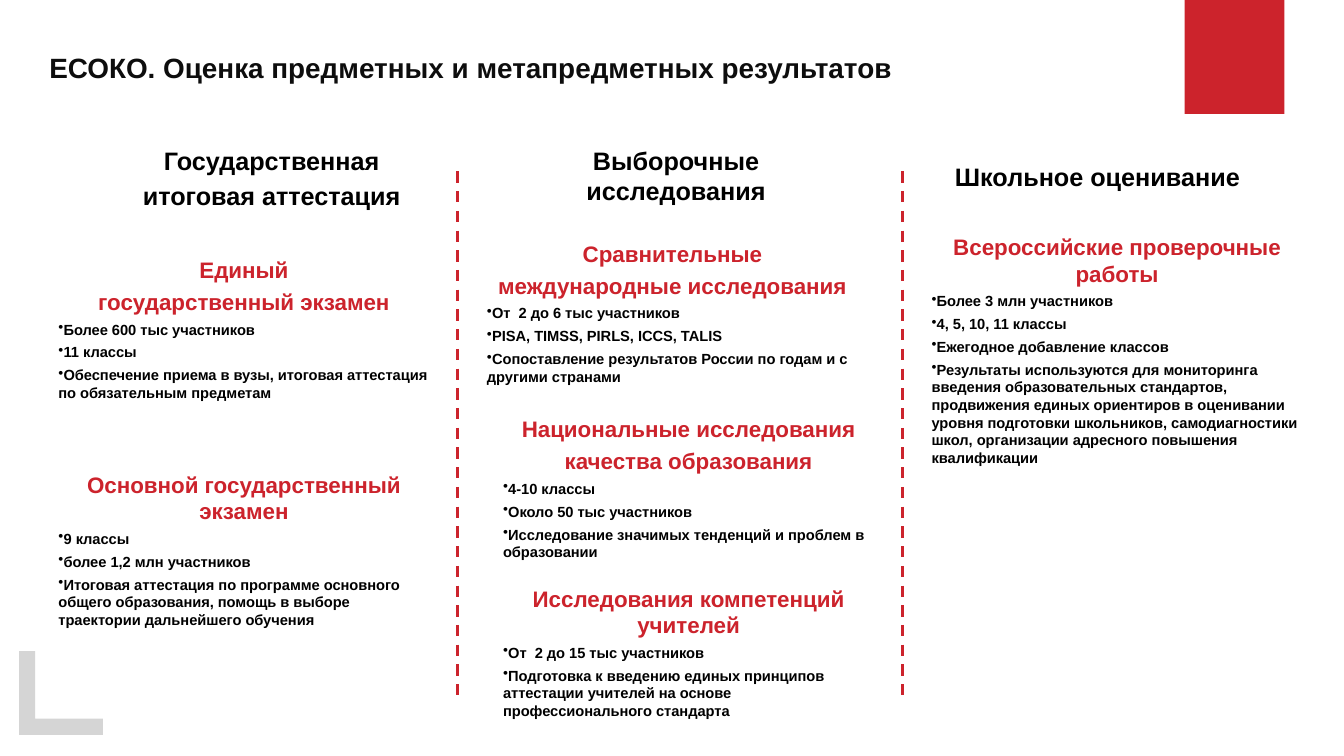
from dataclasses import dataclass

from lxml.etree import SubElement
from pptx import Presentation
from pptx.dml.color import RGBColor as Rgb
from pptx.enum.dml import MSO_LINE as Dash
from pptx.enum.shapes import MSO_CONNECTOR as Link, MSO_SHAPE as Shape
from pptx.enum.text import PP_ALIGN as Align
from pptx.oxml.ns import qn
from pptx.util import Inches, Pt


@dataclass(frozen=True)
class Theme:
    """Colours, font and type sizes of the slide."""
    red: Rgb = Rgb(0xCC, 0x23, 0x2C)
    gray: Rgb = Rgb(0xD5, 0xD5, 0xD5)
    ink: Rgb = Rgb(0x0D, 0x0D, 0x0D)
    black: Rgb = Rgb(0, 0, 0)
    font: str = "Arial"
    title: float = 19.9
    head: float = 18
    topic: float = 16
    body: float = 10.5
    gap: float = 3.8


THEME = Theme()
TITLE = "ЕСОКО. Оценка предметных и метапредметных результатов"
COLUMNS = [
    ((0.45, 1.31), 0.63, ["Государственная", "итоговая аттестация"], [
        (0, 1.1, 2.2, ["Единый", "государственный экзамен"], [
            "Более 600 тыс участников",
            "11 классы",
            "Обеспечение приема в вузы, итоговая аттестация по обязательным предметам"]),
        (0, 3.23, 2.2, ["Основной государственный экзамен"], [
            "9 классы",
            "более 1,2 млн участников",
            "Итоговая аттестация по программе основного общего образования, "
            "помощь в выборе траектории дальнейшего обучения"]),
    ]),
    ((4.7, 1.31), 0.39, ["Выборочные исследования"], [
        (0, 0.94, 2.2, ["Сравнительные", "международные исследования"], [
            "От  2 до 6 тыс участников",
            "PISA, TIMSS, PIRLS, ICCS, TALIS",
            "Сопоставление результатов России по годам и с другими странами"]),
        (0.16, 2.68, 2.2, ["Национальные исследования", "качества образования"], [
            "4-10 классы",
            "Около 50 тыс участников",
            "Исследование значимых тенденций и проблем в образовании"]),
        (0.16, 4.36, 1.62, ["Исследования компетенций учителей"], [
            "От  2 до 15 тыс участников",
            "Подготовка к введению единых принципов аттестации учителей "
            "на основе профессионального стандарта"]),
    ]),
    ((9.11, 1.47), 0.16, ["Школьное оценивание"], [
        (0, 0.71, 3.94, ["Всероссийские проверочные работы"], [
            "Более 3 млн участников",
            "4, 5, 10, 11 классы",
            "Ежегодное добавление классов",
            "Результаты используются для мониторинга введения образовательных "
            "стандартов, продвижения единых ориентиров в оценивании уровня "
            "подготовки школьников, самодиагностики школ, организации адресного "
            "повышения квалификации"]),
    ]),
]


def write(slide, box, rows, pad=0.13):
    """Fill a text box with rows of text, size, colour, alignment and bullet."""
    frame = slide.shapes.add_textbox(*map(Inches, box)).text_frame
    frame.word_wrap = True
    frame.margin_left = frame.margin_right = Inches(pad)
    frame.margin_top = frame.margin_bottom = Inches(pad)
    for i, (text, size, color, align, dot) in enumerate(rows):
        para = frame.add_paragraph() if i else frame.paragraphs[0]
        para.text = text
        para.alignment = align
        para.space_before = Pt(THEME.gap if i else 0)
        if dot:
            SubElement(para._p.get_or_add_pPr(), qn("a:buChar")).set("char", "•")
        font = para.font
        font.name, font.size, font.bold = THEME.font, Pt(size), True
        font.color.rgb = color


def paint(shape, color):
    """Give a shape a flat fill without line or shadow."""
    shape.shadow.inherit = False
    shape.fill.solid()
    shape.fill.fore_color.rgb = color
    shape.line.fill.background()


def decor(slide, box):
    """Draw the red tab and the gray corner at the edges of the box."""
    left, top, width, height = box
    tab = slide.shapes.add_shape(
        Shape.RECTANGLE, Inches(left + width - 1.58), Inches(top), Inches(0.99), Inches(1.13))
    paint(tab, THEME.red)
    side, bar = 0.83, 0.16
    x, y = left + 0.19, top + height - 0.21
    spots = [(x, y), (x, y - side), (x + bar, y - side), (x + bar, y - bar),
             (x + side, y - bar), (x + side, y)]
    spots = [(Inches(a), Inches(b)) for a, b in spots]
    form = slide.shapes.build_freeform(*spots[0], scale=1.0)
    form.add_line_segments(spots[1:], close=True)
    paint(form.convert_to_shape(), THEME.gray)


def column(slide, spot, shift, head, blocks):
    """Place a column head and its topic blocks relative to the spot."""
    left, top = spot
    write(slide, (left + shift, top, 3.23, 1.18),
          [(text, THEME.head, THEME.black, Align.CENTER, False) for text in head])
    for dx, dy, height, topic, items in blocks:
        rows = [(text, THEME.topic, THEME.red, Align.CENTER, False) for text in topic]
        rows += [(text, THEME.body, THEME.black, Align.LEFT, True) for text in items]
        write(slide, (left + dx, top + dy, 3.94, height), rows)


def divide(slide, x, top, end):
    """Draw a dashed upright line between columns."""
    line = slide.shapes.add_connector(
        Link.STRAIGHT, Inches(x), Inches(top), Inches(x), Inches(end))
    line.line.color.rgb = THEME.red
    line.line.width = Pt(2)
    line.line.dash_style = Dash.DASH
    SubElement(line._element.spPr, qn("a:effectLst"))


def main():
    """Build and save the slide."""
    deck = Presentation()
    deck.slide_width, deck.slide_height = Inches(13.33), Inches(7.5)
    slide = deck.slides.add_slide(deck.slide_layouts[6])
    decor(slide, (0, 0, 13.33, 7.5))
    write(slide, (0.44, 0.45, 10.16, 0.99),
          [(TITLE, THEME.title, THEME.ink, Align.LEFT, False)], 0.05)
    for part in COLUMNS:
        column(slide, *part)
    for x in (4.54, 8.95):
        divide(slide, x, 1.7, 6.98)
    deck.save("out.pptx")


if __name__ == "__main__":
    main()
